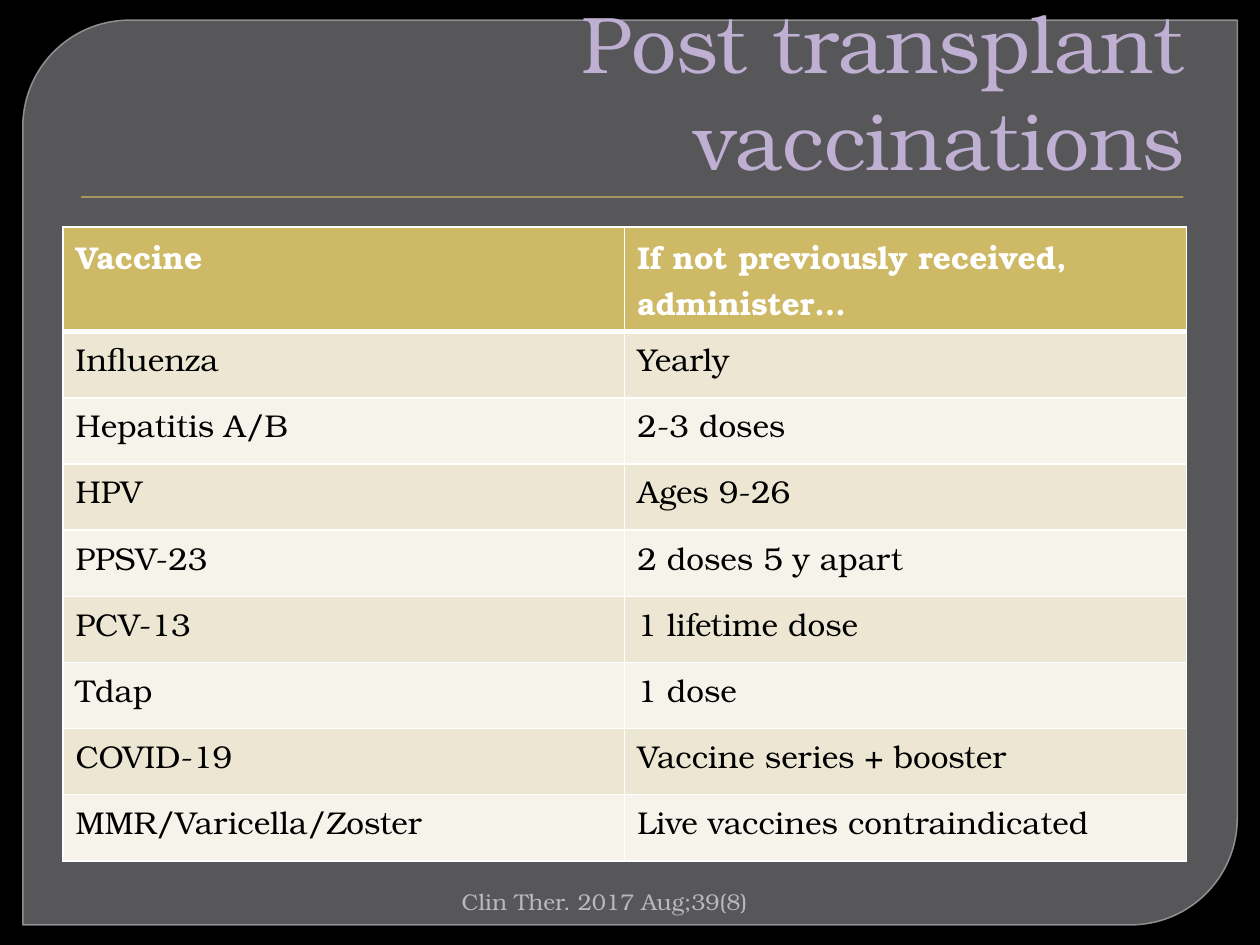
from lxml.etree import SubElement
from pptx import Presentation
from pptx.dml.color import RGBColor
from pptx.enum.shapes import MSO_SHAPE as Shape
from pptx.enum.text import MSO_ANCHOR as Anchor, MSO_AUTO_SIZE as AutoSize, PP_ALIGN as Align
from pptx.oxml.ns import qn
from pptx.util import Pt

BLACK = RGBColor(0x00, 0x00, 0x00)
WHITE = RGBColor(0xFF, 0xFF, 0xFF)
PANEL_GRAY = RGBColor(0x87, 0x86, 0x8B)
EDGE_GRAY = RGBColor(0x9B, 0x9A, 0x9F)
CITATION_GRAY = RGBColor(0xB9, 0xB8, 0xBB)
GOLD = RGBColor(0xCE, 0xB9, 0x66)
BANDS = (RGBColor(0xED, 0xE6, 0xD3), RGBColor(0xF6, 0xF3, 0xEA))
LAVENDER = RGBColor(0xBF, 0xAF, 0xD2)

VACCINATIONS = [
    ("Vaccine", "If not previously received, administer…"),
    ("Influenza", "Yearly"),
    ("Hepatitis A/B", "2-3 doses"),
    ("HPV", "Ages 9-26"),
    ("PPSV-23", "2 doses 5 y apart"),
    ("PCV-13", "1 lifetime dose"),
    ("Tdap", "1 dose"),
    ("COVID-19", "Vaccine series + booster"),
    ("MMR/Varicella/Zoster", "Live vaccines contraindicated"),
]


def write(frame, text, size=18, color=BLACK, bold=False, align=Align.LEFT, font="TeX Gyre Bonum"):
    paragraph = frame.paragraphs[0]
    paragraph.alignment = align
    run = paragraph.add_run()
    run.text = text
    run.font.name = font
    run.font.size = Pt(size)
    run.font.bold = bold
    run.font.color.rgb = color


def set_alpha(properties, percent):
    color = properties.find(qn("a:solidFill"))[0]
    SubElement(color, qn("a:alpha"), val=str(percent * 1000))


def add_border(cell, side, width):
    line = SubElement(cell._tc.get_or_add_tcPr(), qn(f"a:ln{side}"), w=str(Pt(width)))
    fill = SubElement(line, qn("a:solidFill"))
    SubElement(fill, qn("a:srgbClr"), val=str(WHITE))


class SlideBuilder:
    def __init__(self, slide):
        self.slide = slide
        self.shapes = slide.shapes
        slide.background.fill.solid()
        slide.background.fill.fore_color.rgb = BLACK

    def block(self, kind, box, color):
        block = self.shapes.add_shape(kind, *map(Pt, box))
        block.shadow.inherit = False
        block.fill.solid()
        block.fill.fore_color.rgb = color
        block.line.fill.background()
        return block

    def panel(self, box):
        panel = self.block(Shape.ROUND_2_DIAG_RECTANGLE, box, PANEL_GRAY)
        panel.adjustments[0] = 0.118
        panel.adjustments[1] = 0
        panel.line.color.rgb = EDGE_GRAY
        panel.line.width = Pt(0.87)
        properties = panel.element.spPr
        set_alpha(properties, 65)
        set_alpha(properties.find(qn("a:ln")), 88)

    def rule(self, box):
        self.block(Shape.RECTANGLE, box, GOLD)

    def title(self, text, box):
        title = self.shapes.title
        title.left, title.top, title.width, title.height = map(Pt, box)
        title.element.getparent().append(title.element)
        frame = title.text_frame
        frame.auto_size = AutoSize.NONE
        frame.word_wrap = True
        frame.vertical_anchor = Anchor.BOTTOM
        frame.margin_left = Pt(11.5)
        write(frame, text, size=46, color=LAVENDER, align=Align.RIGHT)

    def table(self, rows, left, top, width, row_height):
        box = (left, top, width, row_height * len(rows))
        table = self.shapes.add_table(len(rows), len(rows[0]), *map(Pt, box)).table
        for row, texts in enumerate(rows):
            header = row == 0
            for column, text in enumerate(texts):
                cell = table.cell(row, column)
                widths = {"L": 1, "R": 1, "T": 3 if row == 1 else 1, "B": 3 if header else 1}
                for side, border_width in widths.items():
                    add_border(cell, side, border_width)
                cell.fill.solid()
                cell.fill.fore_color.rgb = GOLD if header else BANDS[(row - 1) % 2]
                write(cell.text_frame, text, color=WHITE if header else BLACK, bold=header)

    def citation(self, text, box):
        frame = self.shapes.add_textbox(*map(Pt, box)).text_frame
        frame.word_wrap = True
        write(frame, text, size=13, color=CITATION_GRAY, align=Align.RIGHT)


def main():
    deck = Presentation()
    deck.slide_width, deck.slide_height = Pt(720), Pt(540)
    builder = SlideBuilder(deck.slides.add_slide(deck.slide_layouts[5]))
    builder.panel((13, 11.5, 694, 517))
    builder.rule((46.3, 112.2, 630, 0.72))
    builder.title("Post transplant vaccinations", (36, 20, 648, 90))
    builder.table(VACCINATIONS, left=36, top=129.8, width=642, row_height=37.8)
    builder.citation("Clin Ther. 2017 Aug;39(8)", (102, 504, 332, 21.6))
    deck.save("out.pptx")


if __name__ == "__main__":
    main()
